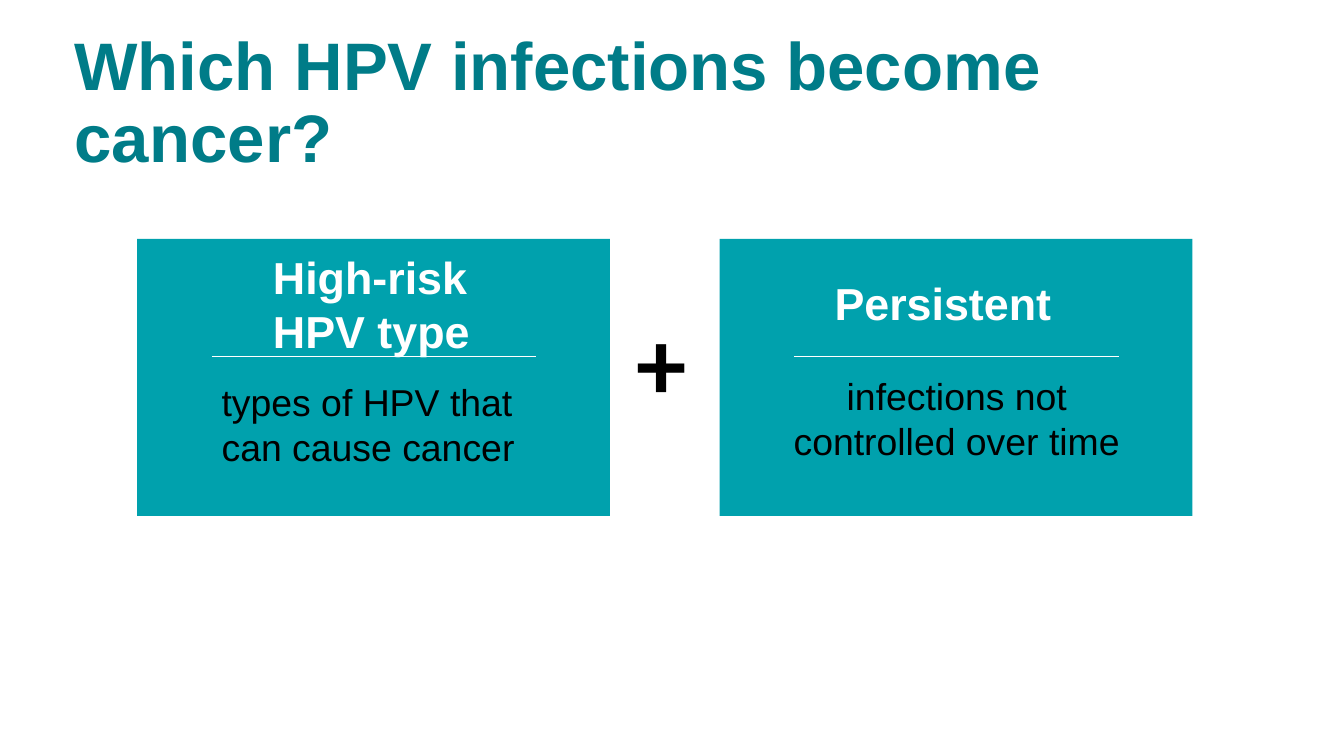
from lxml.etree import SubElement
from pptx import Presentation
from pptx.dml.color import RGBColor
from pptx.enum.shapes import MSO_CONNECTOR as Connector, MSO_SHAPE as Preset
from pptx.enum.text import MSO_ANCHOR as Anchor, MSO_AUTO_SIZE as AutoSize, PP_ALIGN as Align
from pptx.oxml.ns import qn
from pptx.util import Pt

TEAL, DARK_TEAL, WHITE, BLACK = "00A1AD", "007C88", "FFFFFF", "000000"


def color(value):
    return RGBColor.from_string(value)


class SlideBuilder:
    """Holds the slide and its text style and adds each kind of element."""

    font = "Arial"

    def __init__(self, slide):
        self.slide = slide

    def set_text(self, shape, text, size, ink, bold=False, align=Align.LEFT,
                 font=None, auto_size=AutoSize.SHAPE_TO_FIT_TEXT):
        frame = shape.text_frame
        frame.word_wrap = True
        frame.auto_size = auto_size
        frame.vertical_anchor = Anchor.TOP
        paragraph = frame.paragraphs[0]
        paragraph.alignment = align
        run = paragraph.add_run()
        run.text = text
        run.font.name = font or self.font
        run.font.size = Pt(size)
        run.font.bold = bold
        run.font.color.rgb = color(ink)
        return paragraph

    def title(self, text, box):
        shape = self.slide.shapes.title
        shape.left, shape.top, shape.width, shape.height = map(Pt, box)
        paragraph = self.set_text(shape, text, 48, DARK_TEAL, True, auto_size=AutoSize.NONE)
        paragraph.line_spacing = 0.9

    def rectangle(self, shapes, box, fill):
        shape = shapes.add_shape(Preset.RECTANGLE, *map(Pt, box))
        shape.shadow.inherit = False
        shape.fill.solid()
        shape.fill.fore_color.rgb = color(fill)
        shape.line.fill.background()
        return shape

    def label(self, shapes, box, text, size, ink, fill=None, **style):
        if fill:
            shape = self.rectangle(shapes, box, fill)
        else:
            shape = shapes.add_textbox(*map(Pt, box))
        self.set_text(shape, text, size, ink, **style)

    def rule(self, shapes, left, top, width):
        line = shapes.add_connector(Connector.STRAIGHT, Pt(left), Pt(top), Pt(left + width), Pt(top))
        line.line.color.rgb = color(WHITE)
        line.line.width = Pt(0.75)
        SubElement(line._element.spPr, qn("a:effectLst"))

    def card(self, left, heading, heading_box, detail, detail_box, fill=None, align=Align.LEFT):
        shapes = self.slide.shapes.add_group_shape().shapes
        self.rectangle(shapes, (left, 170.6, 337.7, 198), TEAL)
        self.label(shapes, detail_box, detail, 26.7, BLACK, fill, align=align)
        self.label(shapes, heading_box, heading, 32, WHITE, fill, bold=True)
        self.rule(shapes, left + 53.3, 254.9, 231.8)


def main():
    presentation = Presentation()
    presentation.slide_width, presentation.slide_height = Pt(960), Pt(540)
    slide = presentation.slides.add_slide(presentation.slide_layouts[5])
    builder = SlideBuilder(slide)
    builder.title("Which HPV infections become cancer?", (46.1, 19.4, 753.1, 121.7))
    builder.card(98, "High-risk HPV type", (187.9, 175, 158.4, 85),
                 "types of HPV that can cause cancer", (151.2, 267.1, 230.4, 72))
    builder.card(514.1, "Persistent", (589, 193.7, 179.3, 46.1),
                 "infections not controlled over time", (548.6, 262.8, 270, 72),
                 fill=TEAL, align=Align.CENTER)
    builder.label(slide.shapes, (446.4, 210.2, 51.8, 94.3), "+", 72, BLACK,
                  bold=True, align=Align.CENTER, font="Calibri")
    presentation.save("out.pptx")


if __name__ == "__main__":
    main()
